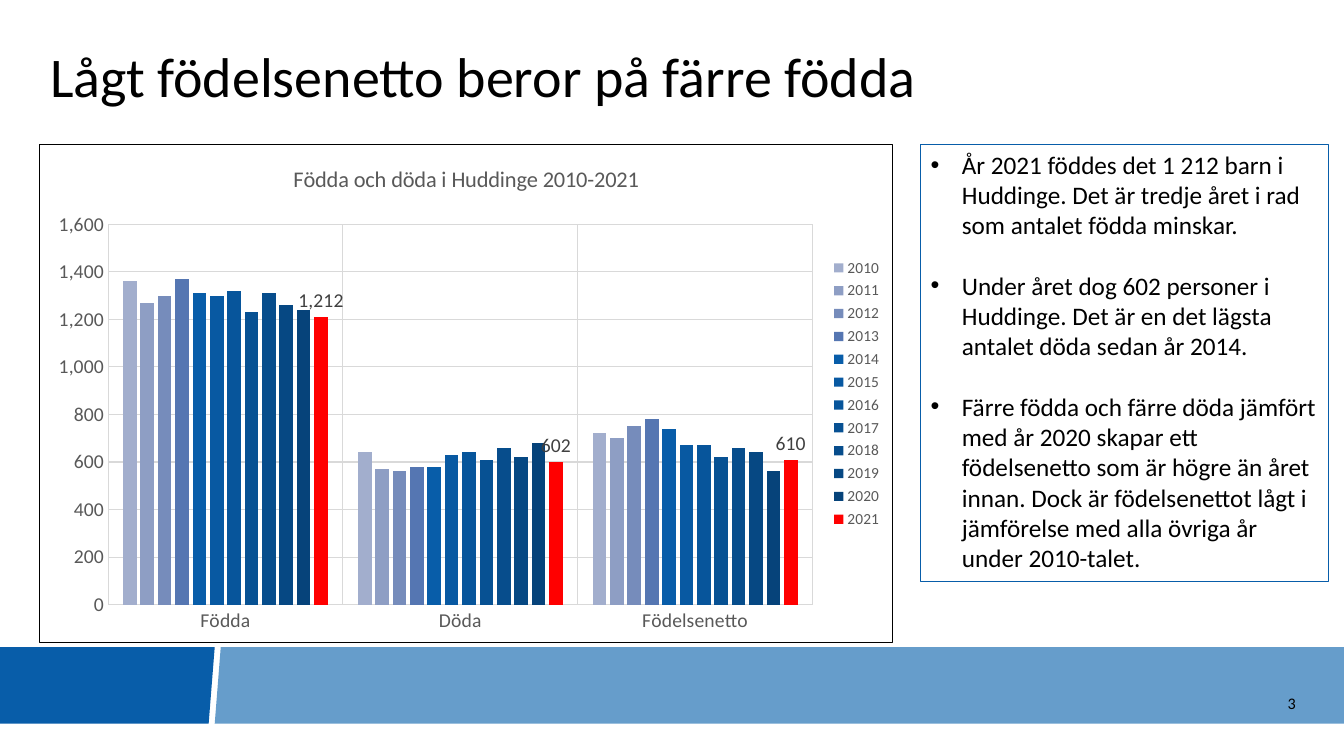
from lxml import etree
from pptx import Presentation
from pptx.chart.data import CategoryChartData
from pptx.dml.color import RGBColor
from pptx.enum.chart import (XL_CHART_TYPE, XL_LABEL_POSITION,
                             XL_LEGEND_POSITION, XL_TICK_MARK)
from pptx.enum.text import MSO_ANCHOR, MSO_AUTO_SIZE, PP_ALIGN
from pptx.oxml import parse_xml
from pptx.oxml.ns import nsdecls, qn
from pptx.util import Inches, Pt

BLACK = RGBColor(0, 0, 0)
BLUE = RGBColor(0x08, 0x5D, 0xA9)
LIGHT = RGBColor(0x66, 0x9D, 0xCB)
GRAY = RGBColor(0x59, 0x59, 0x59)
DARK = RGBColor(0x40, 0x40, 0x40)
GRID = RGBColor(0xD9, 0xD9, 0xD9)
FONT = "Calibri"

CATS = ["Födda", "Döda", "Födelsenetto"]
YEARS = [
    ("2010", (1360, 640, 720), "A2AECD"),
    ("2011", (1270, 570, 700), "8E9EC4"),
    ("2012", (1300, 560, 750), "768CBB"),
    ("2013", (1370, 580, 780), "5576B2"),
    ("2014", (1310, 580, 740), "085DA9"),
    ("2015", (1300, 630, 670), "0859A2"),
    ("2016", (1320, 640, 670), "07559B"),
    ("2017", (1230, 610, 620), "075193"),
    ("2018", (1310, 660, 660), "074D8C"),
    ("2019", (1260, 620, 640), "064883"),
    ("2020", (1240, 680, 560), "06437A"),
    ("2021", (1212, 602, 610), "FF0000"),
]
FACTS = [
    "År 2021 föddes det 1 212 barn i Huddinge. Det är tredje året i rad "
    "som antalet födda minskar.",
    "Under året dog 602 personer i Huddinge. Det är en det lägsta antalet "
    "döda sedan år 2014.",
    "Färre födda och färre döda jämfört med år 2020 skapar ett födelsenetto "
    "som är högre än året innan. Dock är födelsenettot lågt i jämförelse med "
    "alla övriga år under 2010-talet.",
]


def style(font, size, color=BLACK):
    font.name, font.size = FONT, Pt(size)
    font.color.rgb = color


def place(shape, x, y, w, h):
    shape.left, shape.top = Inches(x), Inches(y)
    shape.width, shape.height = Inches(w), Inches(h)


def add_band(slide, x, y, w, h):
    """Footer band of two slanted pieces with a gap between them."""
    dark = [(0, 0), (2.13, 0), (2.07, h), (0, h)]
    light = [(2.19, 0), (w, 0), (w, h), (2.13, h)]
    for points, color in ((light, LIGHT), (dark, BLUE)):
        spots = [(Inches(x + a), Inches(y + b)) for a, b in points]
        form = slide.shapes.build_freeform(*spots[0])
        form.add_line_segments(spots[1:], close=True)
        piece = form.convert_to_shape()
        piece.shadow.inherit = False
        piece.fill.solid()
        piece.fill.fore_color.rgb = color
        piece.line.fill.background()


def add_title(slide, text, x, y, w, h):
    title = slide.shapes.title
    place(title, x, y, w, h)
    frame = title.text_frame
    frame.text = text
    frame.auto_size = MSO_AUTO_SIZE.NONE
    frame.vertical_anchor = MSO_ANCHOR.MIDDLE
    line = frame.paragraphs[0]
    line.alignment = PP_ALIGN.LEFT
    line.line_spacing = 0.9
    style(line.font, 40)


def add_facts(slide, facts, x, y, w, h):
    body = slide.placeholders[1]
    place(body, x, y, w, h)
    body.line.color.rgb = BLUE
    body.line.width = Pt(0.75)
    frame = body.text_frame
    frame.auto_size = MSO_AUTO_SIZE.NONE
    frame.vertical_anchor = MSO_ANCHOR.TOP
    frame.text = "\n".join(facts)
    for i, para in enumerate(frame.paragraphs):
        props = para._p.get_or_add_pPr()
        props.set("marL", str(Inches(0.31)))
        props.set("indent", str(-Inches(0.31)))
        etree.SubElement(props, qn("a:buChar")).set("char", "•")
        para.space_before = Pt(21.6 if i else 0)
        para.line_spacing = 1.0
        style(para.font, 18)


def add_page(slide, text, x, y, w, h):
    box = slide.shapes.add_textbox(*map(Inches, (x, y, w, h)))
    frame = box.text_frame
    frame.word_wrap = True
    frame.vertical_anchor = MSO_ANCHOR.MIDDLE
    frame.text = text
    frame.paragraphs[0].alignment = PP_ALIGN.RIGHT
    style(frame.paragraphs[0].font, 11.5)


def style_axis(axis):
    axis.has_major_gridlines = True
    axis.major_tick_mark = axis.minor_tick_mark = XL_TICK_MARK.NONE
    style(axis.tick_labels.font, 14, GRAY)
    for line in (axis.format.line, axis.major_gridlines.format.line):
        line.color.rgb = GRID
        line.width = Pt(0.75)


def frame_chart(chart):
    """Fix the plot area and draw a thin black border round the chart."""
    plot = chart._chartSpace.chart.plotArea
    for old in plot.findall(qn("c:layout")):
        plot.remove(old)
    spots = zip("xywh", (0.08, 0.16, 0.826, 0.764))
    vals = "".join(f'<c:{k} val="{v}"/>' for k, v in spots)
    plot.insert(0, parse_xml(
        f'<c:layout {nsdecls("c")}><c:manualLayout>'
        '<c:layoutTarget val="inner"/><c:xMode val="edge"/>'
        f'<c:yMode val="edge"/>{vals}</c:manualLayout></c:layout>'))
    chart._chartSpace.chart.addnext(parse_xml(
        f'<c:spPr {nsdecls("c", "a")}><a:noFill/><a:ln w="{Pt(0.75)}">'
        f'<a:solidFill><a:srgbClr val="{BLACK}"/></a:solidFill>'
        '</a:ln></c:spPr>'))


def add_births(slide, x, y, w, h):
    data = CategoryChartData(number_format="#,##0")
    data.categories = CATS
    for year, vals, _ in YEARS:
        data.add_series(year, vals)
    chart = slide.shapes.add_chart(XL_CHART_TYPE.COLUMN_CLUSTERED,
                                   *map(Inches, (x, y, w, h)), data).chart
    style(chart.font, 14)
    chart.has_title = True
    title = chart.chart_title.text_frame
    title.text = "Födda och döda i Huddinge 2010-2021"
    style(title.paragraphs[0].font, 16, GRAY)
    title.paragraphs[0].font.bold = False
    chart.chart_title.include_in_layout = False
    chart.has_legend = True
    chart.legend.position = XL_LEGEND_POSITION.RIGHT
    chart.legend.include_in_layout = False
    style(chart.legend.font, 11, GRAY)

    style_axis(chart.category_axis)
    axis = chart.value_axis
    style_axis(axis)
    axis.format.line.fill.background()
    axis.minimum_scale, axis.maximum_scale, axis.major_unit = 0, 1600, 200
    axis.tick_labels.number_format = "#,##0"
    axis.tick_labels.number_format_is_linked = False

    plot = chart.plots[0]
    plot.vary_by_categories = False
    plot.gap_width, plot.overlap = 219, -27
    for bars, (_, _, color) in zip(plot.series, YEARS):
        bars.format.fill.solid()
        bars.format.fill.fore_color.rgb = RGBColor.from_string(color)
    labels = plot.series[-1].data_labels
    labels.show_value = True
    labels.position = XL_LABEL_POSITION.OUTSIDE_END
    labels.number_format = "#,##0"
    labels.number_format_is_linked = False
    style(labels.font, 14, DARK)
    frame_chart(chart)


def main():
    deck = Presentation()
    deck.slide_width, deck.slide_height = Inches(13.33), Inches(7.5)
    slide = deck.slides.add_slide(deck.slide_layouts[1])
    add_band(slide, 0, 6.42, 13.33, 0.76)
    add_title(slide, "Lågt födelsenetto beror på färre födda",
              0.4, 0.39, 12.38, 0.8)
    add_page(slide, "3", 11.36, 6.77, 1.59, 0.4)
    add_facts(slide, FACTS, 9.13, 1.43, 4.05, 4.34)
    add_births(slide, 0.39, 1.43, 8.47, 4.95)
    deck.save("out.pptx")


if __name__ == "__main__":
    main()
